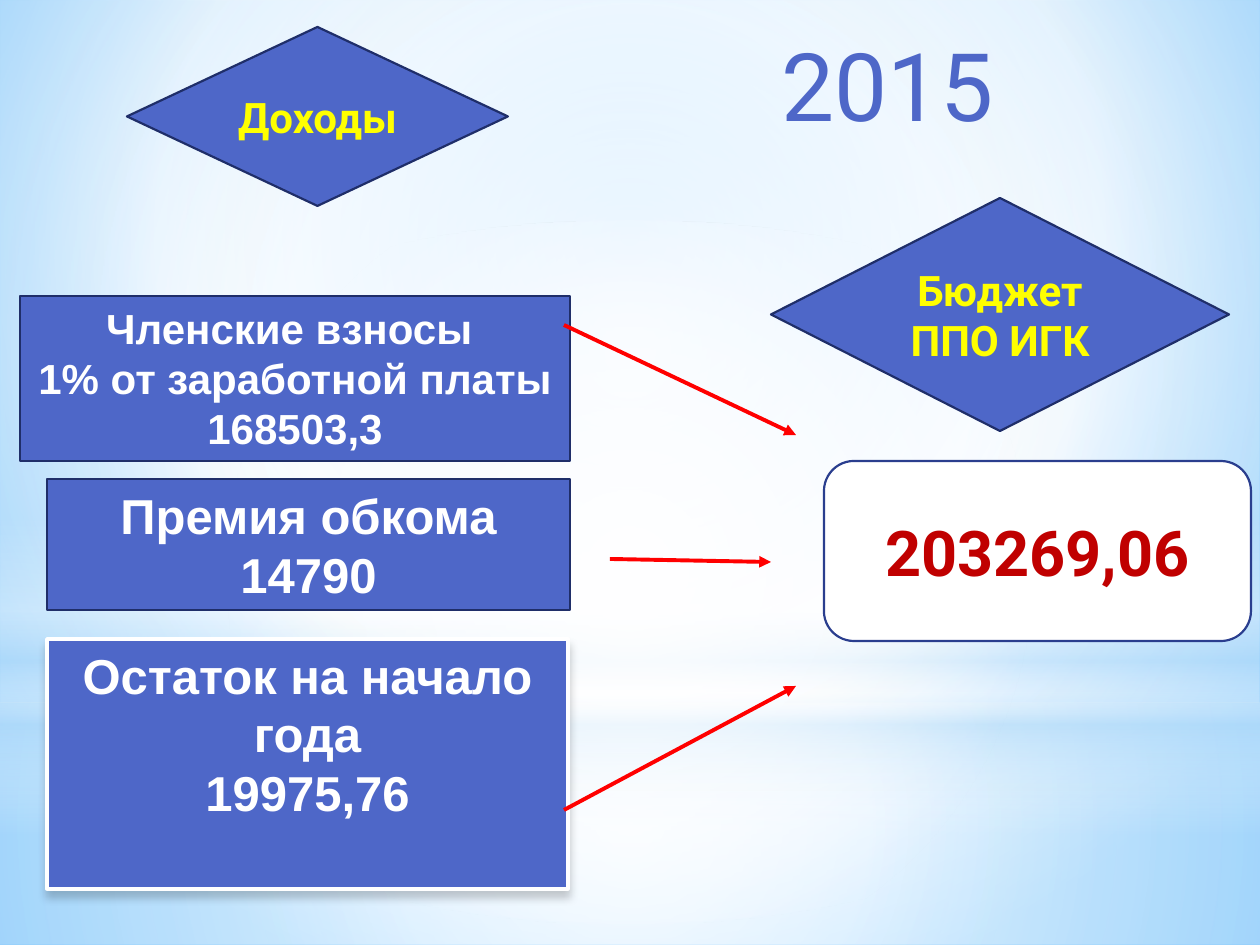
from dataclasses import dataclass

import lxml.etree
import pptx
import pptx.dml.color
import pptx.enum.shapes
import pptx.enum.text
import pptx.oxml
import pptx.oxml.ns
import pptx.util

PX = 914400 / 126  # EMU in one px
SHAPES = pptx.enum.shapes.MSO_SHAPE
ANCHORS = pptx.enum.text.MSO_ANCHOR
BLUE, NAVY, WHITE, YELLOW, RED = "4E67C8", "1F2E69", "FFFFFF", "FFFF00", "FF0000"
SKY = "B4DCFA"
CENTRE = (50, 50, 50, 50)


@dataclass(frozen=True)
class Gradient:
    stops: tuple  # (position %, colour, opacity %)
    focus: tuple = ()  # left, top, right, bottom %; empty means top to bottom


@dataclass(frozen=True)
class Layer:
    kind: SHAPES
    area: tuple
    gradient: Gradient


@dataclass(frozen=True)
class Card:
    kind: SHAPES
    area: tuple
    lines: tuple
    size: int
    font: str = "Arial"
    text: str = WHITE
    fill: str = BLUE
    border: str = NAVY
    border_width: float = 1.25
    anchor: ANCHORS = ANCHORS.TOP
    shadow: bool = False


@dataclass(frozen=True)
class Arrow:
    start: tuple
    end: tuple


BACKDROP = Gradient(((0, "9ED5FF", 100), (60, WHITE, 100), (100, "5BB9FF", 100)),
                    (20, 10, 20, 60))

LAYERS = (
    Layer(SHAPES.RECTANGLE, (0, 703, 1260, 242),
          Gradient(((0, WHITE, 91), (37, WHITE, 76), (100, SKY, 79)), CENTRE)),
    Layer(SHAPES.RECTANGLE, (0, 0, 1260, 703),
          Gradient(((0, WHITE, 89), (48, WHITE, 62), (100, SKY, 79)), CENTRE)),
    Layer(SHAPES.RECTANGLE, (0, 519, 1260, 315),
          Gradient(((0, WHITE, 0), (29, WHITE, 30), (45, SKY, 40),
                    (55, WHITE, 26), (65, SKY, 60), (100, WHITE, 0)))),
    Layer(SHAPES.OVAL, (0, 221, 1260, 703),
          Gradient(((0, WHITE, 100), (56, WHITE, 0)), CENTRE)),
)

CARDS = (
    # Income items
    Card(SHAPES.RECTANGLE, (47, 639, 521, 250),
         ("Остаток на начало года", "19975,76"), 28,
         border=WHITE, border_width=2, shadow=True),
    Card(SHAPES.RECTANGLE, (47, 479, 523, 131), ("Премия обкома", "14790"), 28),
    Card(SHAPES.RECTANGLE, (20, 296, 550, 165),
         ("Членские взносы ", "1% от заработной платы", "168503,3"), 24),
    # Headings and total
    Card(SHAPES.FLOWCHART_DECISION, (127, 27, 381, 179), ("Доходы",), 24,
         "Roboto", YELLOW, anchor=ANCHORS.MIDDLE),
    Card(SHAPES.FLOWCHART_DECISION, (771, 198, 458, 233), ("Бюджет ППО ИГК",), 24,
         "Roboto", YELLOW, anchor=ANCHORS.MIDDLE),
    Card(SHAPES.ROUNDED_RECTANGLE, (824, 461, 427, 180), ("203269,06",), 36,
         "Roboto", "C00000", WHITE, "2A3E8E", anchor=ANCHORS.MIDDLE),
)

ARROWS = (
    Arrow((564, 325), (796, 435)),
    Arrow((610, 559), (771, 562)),
    Arrow((564, 810), (796, 686)),
)


def emu(*lengths: int) -> list[int]:
    return [round(length * PX) for length in lengths]


def colour(value: str) -> pptx.dml.color.RGBColor:
    return pptx.dml.color.RGBColor.from_string(value)


def add_xml(parent, tag: str, **attributes):
    element = lxml.etree.SubElement(parent, pptx.oxml.ns.qn(tag))
    for name, value in attributes.items():
        element.set(name, str(value))
    return element


def paint_gradient(properties, gradient: Gradient) -> None:
    """Replace the solid fill of the properties element with a gradient."""
    solid = properties.find(pptx.oxml.ns.qn("a:solidFill"))
    fill = add_xml(properties, "a:gradFill", rotWithShape=1)
    stops = add_xml(fill, "a:gsLst")
    for position, value, opacity in gradient.stops:
        stop = add_xml(stops, "a:gs", pos=position * 1000)
        tint = add_xml(stop, "a:srgbClr", val=value)
        if opacity < 100:
            add_xml(tint, "a:alpha", val=opacity * 1000)
    if gradient.focus:
        focus = add_xml(fill, "a:path", path="circle")
        sides = {side: share * 1000 for side, share in zip("ltrb", gradient.focus)}
        add_xml(focus, "a:fillToRect", **sides)
    else:
        add_xml(fill, "a:lin", ang=90 * 60000, scaled=0)
    properties.replace(solid, fill)


def write(frame, lines: tuple, size: int, font: str, text: str, bold: bool) -> None:
    frame.word_wrap = True
    frame.auto_size = pptx.enum.text.MSO_AUTO_SIZE.NONE
    for index, line in enumerate(lines):
        para = frame.paragraphs[0] if index == 0 else frame.add_paragraph()
        para.alignment = pptx.enum.text.PP_ALIGN.CENTER
        span = para.add_run()
        span.text = line
        span.font.name = font
        span.font.size = pptx.util.Pt(size)
        span.font.bold = bold
        span.font.color.rgb = colour(text)


def draw_layer(page, layer: Layer) -> None:
    shape = page.shapes.add_shape(layer.kind, *emu(*layer.area))
    shape.shadow.inherit = False
    shape.line.fill.background()
    shape.fill.solid()
    paint_gradient(shape._element.spPr, layer.gradient)


def draw_card(page, card: Card) -> None:
    box = page.shapes.add_shape(card.kind, *emu(*card.area))
    box.shadow.inherit = False
    box.fill.solid()
    box.fill.fore_color.rgb = colour(card.fill)
    box.line.color.rgb = colour(card.border)
    box.line.width = pptx.util.Pt(card.border_width)
    box.text_frame.vertical_anchor = card.anchor
    write(box.text_frame, card.lines, card.size, card.font, card.text, True)
    if card.shadow:
        effects = box._element.spPr.find(pptx.oxml.ns.qn("a:effectLst"))
        shadow = add_xml(effects, "a:outerShdw", blurRad=pptx.util.Pt(5),
                         dist=pptx.util.Pt(4), dir=90 * 60000, rotWithShape=0)
        add_xml(add_xml(shadow, "a:srgbClr", val="000000"), "a:alpha", val=20000)


def draw_arrow(page, arrow: Arrow) -> None:
    line = page.shapes.add_connector(pptx.enum.shapes.MSO_CONNECTOR.STRAIGHT,
                                     *emu(*arrow.start, *arrow.end))
    line.line.color.rgb = colour(RED)
    line.line.width = pptx.util.Pt(2.25)
    add_xml(line.line._get_or_add_ln(), "a:tailEnd", type="triangle")
    add_xml(line._element.spPr, "a:effectLst")


def draw_title(page, text: str) -> None:
    title = page.shapes.title
    title.left, title.top, title.width, title.height = emu(689, 21, 397, 127)
    title.text_frame.vertical_anchor = ANCHORS.TOP
    write(title.text_frame, (text,), 54, "Roboto", BLUE, False)
    page.shapes._spTree.append(title._element)  # bring above the layers


def main() -> None:
    deck = pptx.Presentation()
    deck.slide_width, deck.slide_height = emu(1260, 945)
    page = deck.slides.add_slide(deck.slide_layouts.get_by_name("Title Only"))

    # Backdrop
    page.background.fill.solid()
    backdrop = page._element.find(".//" + pptx.oxml.ns.qn("p:bgPr"))
    paint_gradient(backdrop, BACKDROP)
    for layer in LAYERS:
        draw_layer(page, layer)

    # Content
    for card in CARDS:
        draw_card(page, card)
    for arrow in ARROWS:
        draw_arrow(page, arrow)
    draw_title(page, "2015")
    deck.save("out.pptx")


if __name__ == "__main__":
    main()
